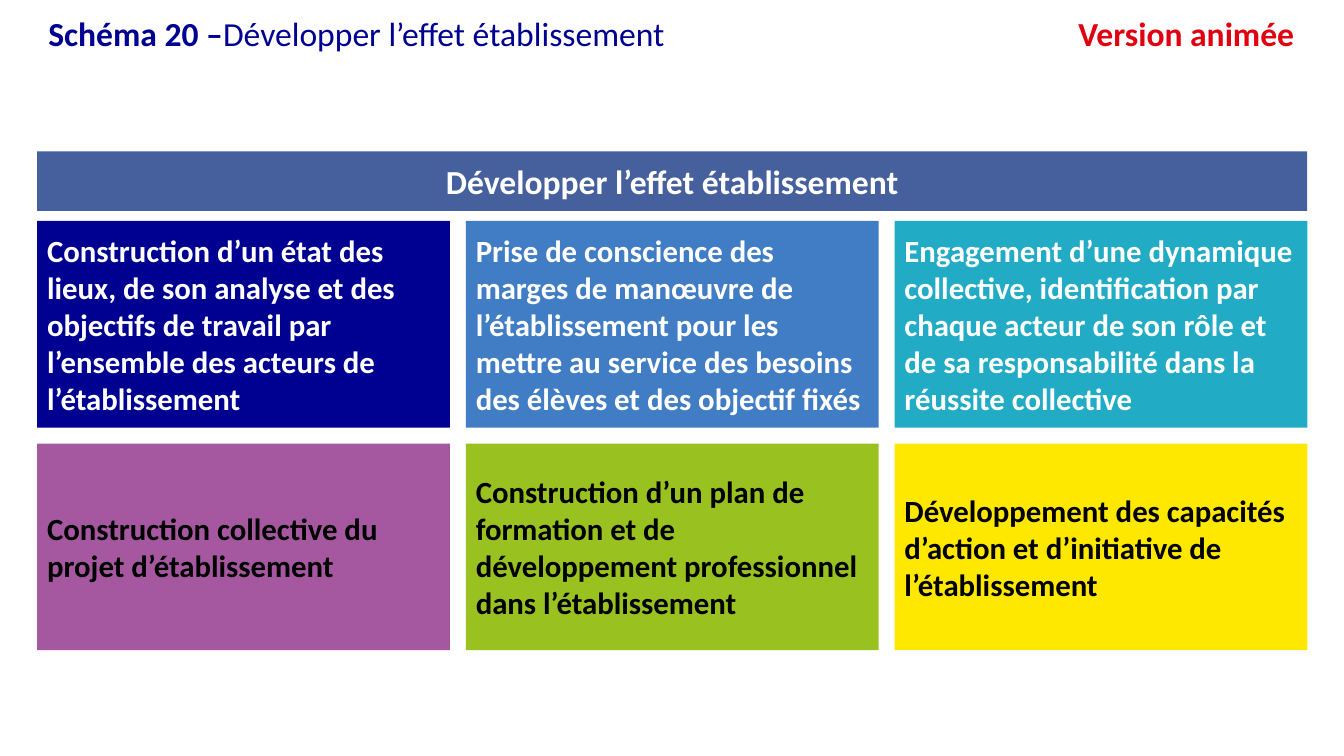
from lxml import etree
from pptx import Presentation
from pptx.dml.color import RGBColor
from pptx.enum.shapes import MSO_SHAPE
from pptx.enum.text import MSO_ANCHOR, PP_ALIGN
from pptx.oxml.ns import qn
from pptx.util import Pt

RECT = MSO_SHAPE.RECTANGLE
MIDDLE = MSO_ANCHOR.MIDDLE
LEFT, CENTER = PP_ALIGN.LEFT, PP_ALIGN.CENTER

FONT = "Calibri"
WHITE, BLACK, NAVY, RED = "FFFFFF", "000000", "000091", "E1000F"
MARGIN, FULL_W = 26.6, 907.2
CARD_W, CARD_H = 294.8, 147.6
CARD_TOP, ROW_STEP = 157.8, 159
COL_STEP = (FULL_W - CARD_W) / 2

CARD_ROWS = [
    (WHITE, [
        (NAVY, "Construction d’un état des lieux, de son analyse et des objectifs "
               "de travail par l’ensemble des acteurs de l’établissement"),
        ("417DC4", "Prise de conscience des marges de manœuvre de l’établissement pour "
                   "les mettre au service des besoins des élèves et des objectif fixés"),
        ("21ABC4", "Engagement d’une dynamique collective, identification par chaque acteur "
                   "de son rôle et de sa responsabilité dans la réussite collective"),
    ]),
    (BLACK, [
        ("A558A0", "Construction collective du projet d’établissement"),
        ("99C221", "Construction d’un plan de formation et de développement "
                   "professionnel dans l’établissement"),
        ("FFE800", "Développement des capacités d’action et d’initiative "
                   "de l’établissement"),
    ]),
]


def rgb(color):
    return RGBColor.from_string(color)


def set_font(font, size, color, bold):
    font.name = FONT
    font.size = Pt(size)
    font.bold = bold
    font.color.rgb = rgb(color)


def add_box(s, x, y, w, h, fill, text, size, color, align=LEFT):
    sp = s.shapes.add_shape(RECT, Pt(x), Pt(y), Pt(w), Pt(h))
    sp.shadow.inherit = False
    sp.fill.solid()
    sp.fill.fore_color.rgb = rgb(fill)
    sp.line.fill.background()
    tf = sp.text_frame
    tf.word_wrap = True
    tf.vertical_anchor = MIDDLE
    p = tf.paragraphs[0]
    p.text = text
    p.alignment = align
    set_font(p.font, size, color, True)


def add_right_tab(p, pos):
    tabs = etree.SubElement(p._p.get_or_add_pPr(), qn("a:tabLst"))
    etree.SubElement(tabs, qn("a:tab"), pos=str(Pt(pos)), algn="r")


def add_title(s, x, y, w, h, parts):
    sp = s.shapes.add_textbox(Pt(x), Pt(y), Pt(w), Pt(h))
    tf = sp.text_frame
    tf.word_wrap = True
    tf.vertical_anchor = MIDDLE
    p = tf.paragraphs[0]
    add_right_tab(p, 890)
    for text, color, bold in parts:
        r = p.add_run()
        r.text = text
        set_font(r.font, 24, color, bold)


def main():
    prs = Presentation()
    prs.slide_width, prs.slide_height = Pt(960), Pt(540)
    s = prs.slides.add_slide(prs.slide_layouts[6])

    for row, (color, cards) in enumerate(CARD_ROWS):
        for col, (fill, text) in enumerate(cards):
            add_box(s, MARGIN + col * COL_STEP, CARD_TOP + row * ROW_STEP,
                    CARD_W, CARD_H, fill, text, 22, color)

    add_box(s, MARGIN, 108.2, FULL_W, 42.4, "465F9D",
            "Développer l’effet établissement", 24, WHITE, CENTER)
    add_title(s, 27.4, 10.2, FULL_W, 27, [
        ("Schéma 20 –", NAVY, True),
        ("Développer l’effet établissement\t", NAVY, False),
        ("Version animée", RED, True),
    ])
    prs.save("out.pptx")


if __name__ == "__main__":
    main()
